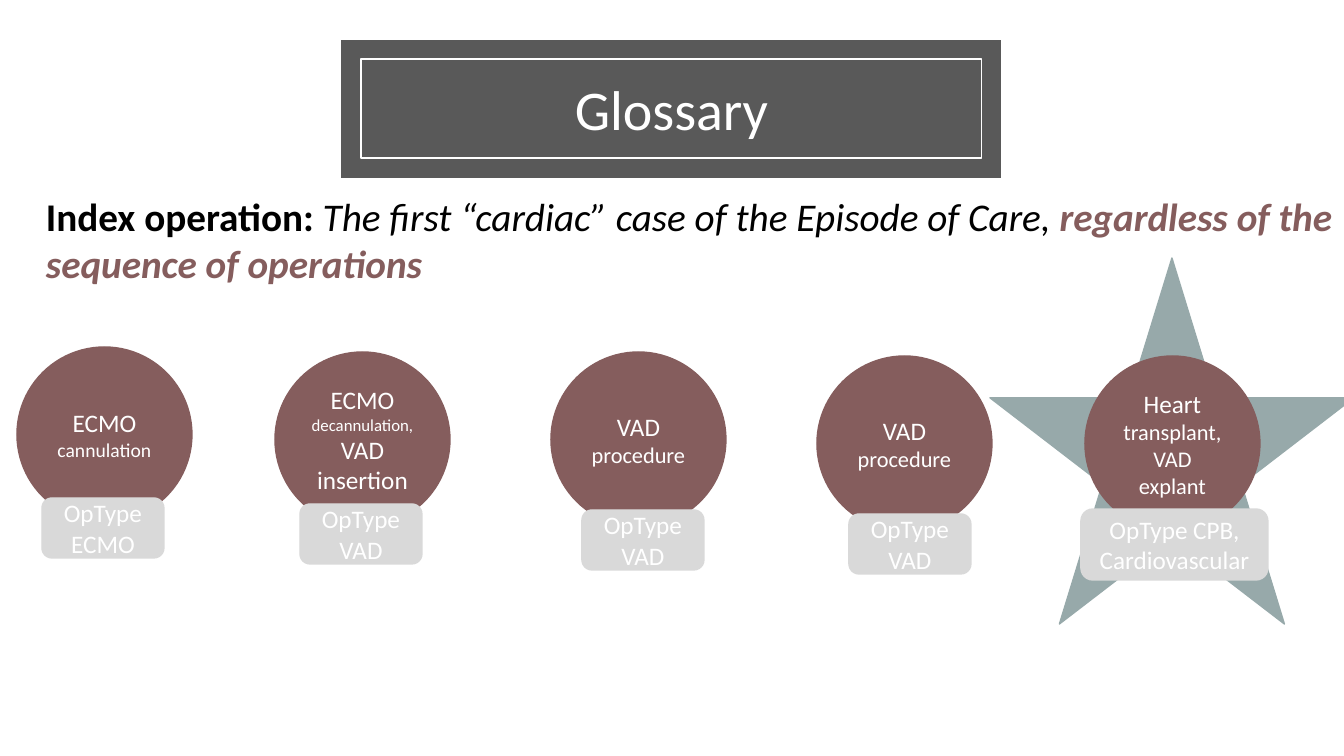
from pptx import Presentation
from pptx.dml.color import RGBColor
from pptx.enum.shapes import MSO_SHAPE
from pptx.enum.text import MSO_ANCHOR, MSO_AUTO_SIZE, PP_ALIGN
from pptx.util import Emu, Pt

PX = 914400 / 100.8
COLORS = {
    "white": "FFFFFF",
    "black": "000000",
    "banner": "595959",
    "star": "97A9AA",
    "operation": "855D5D",
    "label": "D9D9D9",
}


def style_shape(shape, box, fill, line=None, line_width=1):
    shape.left, shape.top, shape.width, shape.height = [Emu(round(v * PX)) for v in box]
    shape.fill.solid()
    shape.fill.fore_color.rgb = RGBColor.from_string(COLORS[fill])
    if line:
        shape.line.color.rgb = RGBColor.from_string(COLORS[line])
        shape.line.width = Pt(line_width)
    else:
        shape.line.fill.background()


def write_runs(shape, runs, alignment=PP_ALIGN.CENTER, anchor=MSO_ANCHOR.MIDDLE):
    frame_format = {
        "word_wrap": True,
        "auto_size": MSO_AUTO_SIZE.NONE,
        "vertical_anchor": anchor,
    }
    for name, value in frame_format.items():
        setattr(shape.text_frame, name, value)
    paragraph = shape.text_frame.paragraphs[0]
    paragraph.alignment = alignment
    for text, size, color, bold, italic in runs:
        run = paragraph.add_run()
        run.text = text
        font_format = {"name": "Calibri", "size": Pt(size), "bold": bold, "italic": italic}
        for name, value in font_format.items():
            setattr(run.font, name, value)
        run.font.color.rgb = RGBColor.from_string(COLORS[color])


presentation = Presentation()
presentation.slide_width = Emu(round(1344 * PX))
presentation.slide_height = Emu(round(756 * PX))
slide = presentation.slides.add_slide(presentation.slide_layouts[5])
shapes = slide.shapes

# Star behind the index operation, and the title backdrop
for kind, box, fill, line in [
    (MSO_SHAPE.STAR_5_POINT, (990, 258, 364, 366), "star", "star"),
    (MSO_SHAPE.RECTANGLE, (341, 40, 660, 138), "banner", None),
]:
    shape = shapes.add_shape(kind, 0, 0, 0, 0)
    shape.shadow.inherit = False
    style_shape(shape, box, fill, line)

# Title, brought in front of its backdrop
title = shapes.title
title.element.getparent().append(title.element)
style_shape(title, (361, 59, 621, 99), "banner", "white", 0.75)
write_runs(title, [("Glossary", 40, "white", False, False)])

# Definition
definition = shapes.add_textbox(*[Emu(round(v * PX)) for v in (17, 187, 1327, 119)])
write_runs(
    definition,
    [
        ("Index operation: ", 28, "black", True, False),
        ("The first “cardiac” case of the Episode of Care, ", 28, "black", False, True),
        ("regardless of the sequence of operations", 28, "operation", True, True),
    ],
    PP_ALIGN.LEFT,
    MSO_ANCHOR.TOP,
)
definition.text_frame.margin_left = Emu(round(29 * PX))

# Operations in sequence: circle position, circle text, label box, label text
operations = [
    (17, 347, [("ECMO ", 18), ("cannulation", 14)], (42, 498, 122, 60), "OpType ECMO"),
    (275, 352, [("ECMO ", 18), ("decannulation, ", 12), ("VAD insertion", 18)],
     (300, 504, 122, 60), "OpType VAD"),
    (551, 352, [("VAD ", 18), ("procedure", 16)], (582, 510, 122, 60), "OpType VAD"),
    (817, 356, [("VAD ", 18), ("procedure", 16)], (849, 514, 122, 60), "OpType VAD"),
    (1085, 356, [("Heart ", 18), ("transplant, VAD explant", 16)],
     (1081, 509, 187, 71), "OpType CPB, Cardiovascular"),
]
DIAMETER = 175
for left, top, circle_text, label_box, label_text in operations:
    circle_box = (left, top, DIAMETER, DIAMETER)
    for kind, box, color, texts in [
        (MSO_SHAPE.OVAL, circle_box, "operation", circle_text),
        (MSO_SHAPE.ROUNDED_RECTANGLE, label_box, "label", [(label_text, 18)]),
    ]:
        shape = shapes.add_shape(kind, 0, 0, 0, 0)
        shape.shadow.inherit = False
        style_shape(shape, box, color, color)
        write_runs(shape, [(text, size, "white", False, False) for text, size in texts])

presentation.save("out.pptx")
